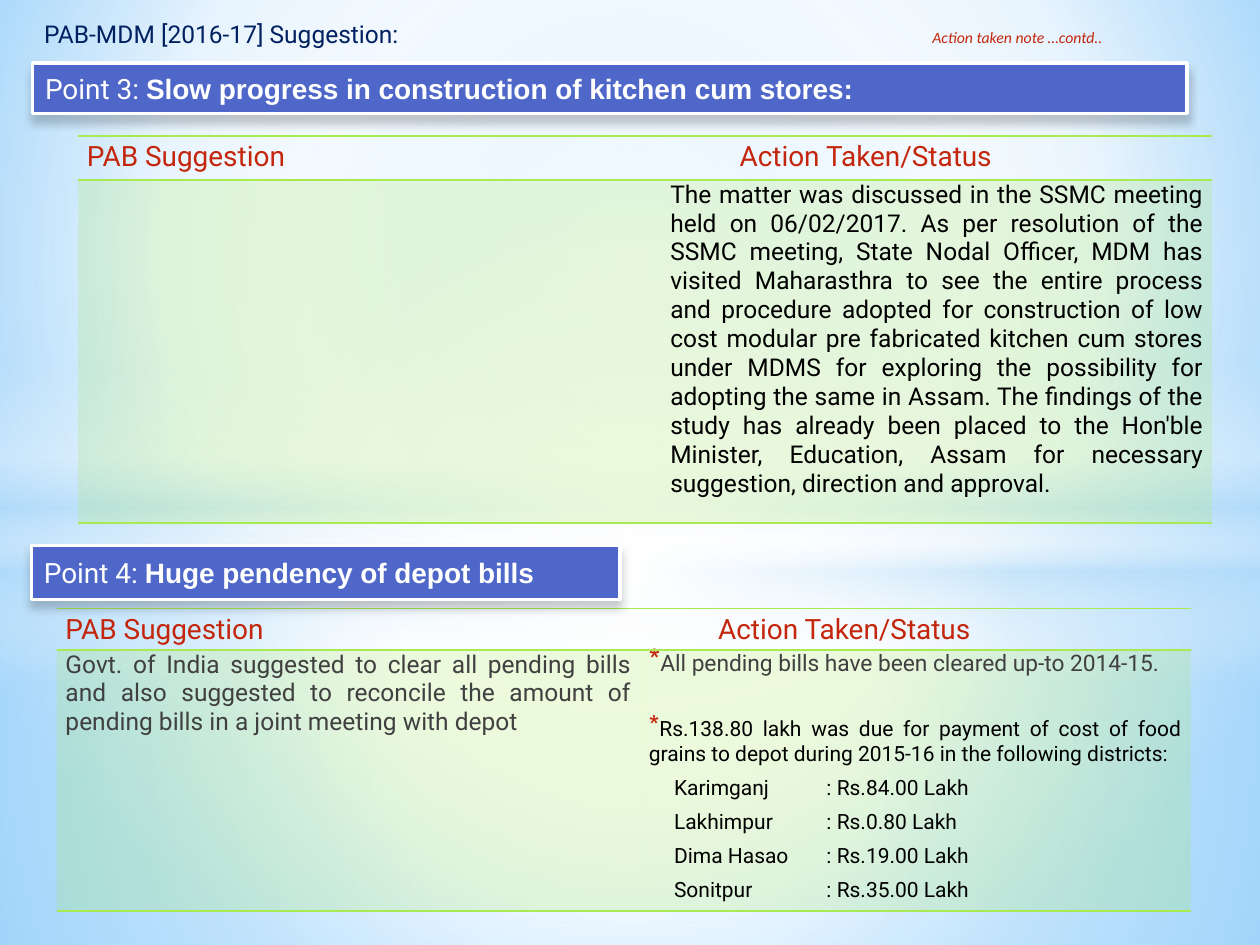
import pptx
import pptx.util
import pptx.oxml
import pptx.oxml.ns
import pptx.dml.color
import pptx.enum.shapes
import pptx.enum.text

Inches, Pt = pptx.util.Inches, pptx.util.Pt
Align, Anchor = pptx.enum.text.PP_ALIGN, pptx.enum.text.MSO_ANCHOR
Shape = pptx.enum.shapes.MSO_SHAPE
qn = pptx.oxml.ns.qn

COLORS = {
    "navy": "002060", "red": "C3260C", "banner": "4E67C8", "green": "A7EA52",
    "white": "FFFFFF", "black": "000000", "gray": "404040",
    "sky": "B4DCFA", "edge": "9ED5FF", "deep": "5BB9FF",
}
NO_GRID_STYLE = "{2D5ABB26-0587-4C30-8999-92F81FD0307C}"
COLUMNS = (4.63, 4.37)
CENTER = (50, 50, 50, 50)


def rgb(name):
    return pptx.dml.color.RGBColor.from_string(COLORS[name])


def inches(box):
    return [Inches(value) for value in box]


def xml(markup):
    head, tail = markup.split(">", 1) if not markup.split(">", 1)[0].endswith("/") else (markup[:-2], None)
    namespace = " " + pptx.oxml.ns.nsdecls("a")
    return pptx.oxml.parse_xml(head + namespace + ("/>" if tail is None else ">" + tail))


def color_xml(name, opacity=100):
    return f'<a:srgbClr val="{COLORS[name]}"><a:alpha val="{opacity * 1000}"/></a:srgbClr>'


def set_font(font, size, color, name="Roboto", bold=False, italic=False):
    font.size, font.name, font.bold, font.italic = Pt(size), name, bold, italic
    font.color.rgb = rgb(color)


def add_run(paragraph, text, *style, **options):
    run = paragraph.add_run()
    run.text = text
    set_font(run.font, *style, **options)


def set_tabs(paragraph, *positions):
    stops = "".join(f'<a:tab pos="{Inches(p)}" algn="l"/>' for p in positions)
    paragraph._p.get_or_add_pPr().append(xml(f"<a:tabLst>{stops}</a:tabLst>"))


def set_gradient(owner, fill, stops, center=None):
    """Stops are (position, color, opacity); without a center the run is vertical."""
    fill.gradient()
    gradient = next(owner.iter(qn("a:gradFill")))
    stop_list = "".join(f'<a:gs pos="{position * 1000}">{color_xml(color, opacity)}</a:gs>'
                        for position, color, opacity in stops)
    if center:
        sides = " ".join(f'{side}="{share * 1000}"' for side, share in zip("ltrb", center))
        direction = f'<a:path path="circle"><a:fillToRect {sides}/></a:path>'
    else:
        direction = '<a:lin ang="5400000" scaled="0"/>'
    gradient.getparent().replace(gradient, xml(
        f'<a:gradFill rotWithShape="1"><a:gsLst>{stop_list}</a:gsLst>{direction}</a:gradFill>'))


def add_backdrop(slide, width, height):
    set_gradient(slide.element, slide.background.fill,
                 [(0, "edge", 100), (60, "white", 100), (100, "deep", 100)], (20, 10, 20, 60))
    layers = [  # shape, top and height as shares, stops, center
        (Shape.RECTANGLE, 0.564, 0.436,
         [(0, "white", 91), (37, "white", 76), (100, "sky", 79)], CENTER),
        (Shape.RECTANGLE, 0, 0.564,
         [(0, "white", 89), (48, "white", 62), (100, "sky", 79)], CENTER),
        (Shape.RECTANGLE, 0.387, 0.333,
         [(0, "white", 0), (29, "white", 30), (45, "sky", 40),
          (55, "white", 26), (65, "sky", 60), (100, "white", 0)], None),
        (Shape.OVAL, 0.233, 0.744, [(0, "white", 100), (54, "white", 0)], CENTER),
    ]
    for kind, top, share, stops, center in layers:
        layer = slide.shapes.add_shape(kind, 0, int(top * height), width, int(share * height))
        layer.shadow.inherit = False
        layer.line.fill.background()
        set_gradient(layer.element, layer.fill, stops, center)


def add_title(slide, box):
    title = slide.shapes.title
    title.element.getparent().append(title.element)  # in front of the backdrop
    title.left, title.top, title.width, title.height = inches(box)
    frame = title.text_frame
    frame.vertical_anchor = Anchor.MIDDLE
    frame.auto_size = pptx.enum.text.MSO_AUTO_SIZE.NONE
    paragraph = frame.paragraphs[0]
    paragraph.alignment = Align.LEFT
    set_tabs(paragraph, 7.05)
    add_run(paragraph, "PAB-MDM [2016-17] Suggestion:", 14, "navy")
    add_run(paragraph, "\tAction taken note …contd..", 9, "red", name="Calibri", italic=True)


def add_banner(slide, box, label, heading):
    banner = slide.shapes.add_shape(Shape.RECTANGLE, *inches(box))
    banner.shadow.inherit = False
    banner.fill.solid()
    banner.fill.fore_color.rgb = rgb("banner")
    banner.line.color.rgb = rgb("white")
    banner.line.width = Pt(2)
    banner.element.spPr.find(qn("a:effectLst")).append(xml(
        f'<a:outerShdw blurRad="{Pt(5)}" dist="{Pt(4)}" dir="5400000" rotWithShape="0">'
        f'{color_xml("black", 20)}</a:outerShdw>'))
    frame = banner.text_frame
    frame.word_wrap = True
    frame.vertical_anchor = Anchor.MIDDLE
    paragraph = frame.paragraphs[0]
    paragraph.alignment = Align.LEFT
    add_run(paragraph, label + " ", 16, "white")
    add_run(paragraph, heading, 16, "white", name="Arial", bold=True)


def set_borders(cell, sides):
    properties = cell._tc.get_or_add_tcPr()
    for index, side in enumerate(sides):
        properties.insert(index, xml(f'<a:ln{side} w="{Pt(1)}"><a:solidFill>{color_xml("green")}'
                                     f'</a:solidFill></a:ln{side}>'))


def add_body_paragraph(cell, text, size, color, before=2.4, after=3, bullet=False, tabs=()):
    frame = cell.text_frame
    first = not frame.text
    paragraph = frame.paragraphs[0] if first else frame.add_paragraph()
    paragraph.text = text
    paragraph.alignment = Align.LEFT if tabs else Align.JUSTIFY
    paragraph.space_before, paragraph.space_after = Pt(0 if first else before), Pt(after)
    if bullet:
        properties = paragraph._p.get_or_add_pPr()
        properties.append(xml(f'<a:buClr>{color_xml("red")}</a:buClr>'))
        properties.append(xml('<a:buSzPct val="130000"/>'))
        properties.append(xml('<a:buChar char="*"/>'))
    if tabs:
        set_tabs(paragraph, *tabs)
    set_font(paragraph.font, size, color)


def add_status_table(slide, left, top, row_heights):
    """Adds the two-column table with its headings; returns the body cells."""
    frame = slide.shapes.add_table(2, 2, *inches((left, top, sum(COLUMNS), sum(row_heights))))
    table = frame.table
    table.first_row = table.horz_banding = False
    table._tbl.tblPr.find(qn("a:tableStyleId")).text = NO_GRID_STYLE
    for column, width in zip(table.columns, COLUMNS):
        column.width = Inches(width)
    for row, height in zip(table.rows, row_heights):
        row.height = Inches(height)
    for cell in table.iter_cells():
        cell.margin_left = cell.margin_right = Inches(0.07)
        cell.margin_top = cell.margin_bottom = 0
    headings = (("PAB Suggestion", 0.07), ("Action Taken/Status", 0.62))
    for column, (heading, margin) in enumerate(headings):
        header, body = table.cell(0, column), table.cell(1, column)
        header.fill.background()
        header.margin_left = Inches(margin)
        paragraph = header.text_frame.paragraphs[0]
        paragraph.text = heading
        paragraph.line_spacing, paragraph.space_after = 1.15, Pt(3)
        set_font(paragraph.font, 16, "red")
        body.fill.solid()
        body.fill.fore_color.rgb = rgb("green")
        next(body._tc.iter(qn("a:srgbClr"))).append(xml('<a:alpha val="20000"/>'))
        set_borders(header, "TB")
        set_borders(body, "TB")
    return table.cell(1, 0), table.cell(1, 1)


def add_kitchen_table(slide, left, top):
    status = add_status_table(slide, left, top, (0.35, 2.72))[1]
    add_body_paragraph(
        status,
        "The matter was discussed in the SSMC meeting held on 06/02/2017. As per resolution of the "
        "SSMC meeting, State Nodal Officer, MDM has visited Maharasthra to see the entire process "
        "and procedure adopted for construction of low cost modular pre fabricated kitchen cum "
        "stores under MDMS for exploring the possibility for adopting the same in Assam. The "
        "findings of the study has already been placed to the Hon'ble Minister, Education, Assam "
        "for necessary suggestion, direction and approval.", 14, "black")


def add_bills_table(slide, left, top):
    suggestion, status = add_status_table(slide, left, top, (0.33, 2.07))
    add_body_paragraph(
        suggestion,
        "Govt. of India suggested to clear all pending bills and also suggested to reconcile the "
        "amount of pending bills in a joint meeting with depot", 14, "gray", after=6)
    add_body_paragraph(status, "All pending bills have been cleared up-to 2014-15.",
                       13, "gray", bullet=True)
    add_body_paragraph(
        status,
        "Rs.138.80 lakh was due for payment of cost of food grains to depot during 2015-16 in the "
        "following districts:", 12, "black", before=20, bullet=True)
    dues = {"Karimganj": "84.00", "Lakhimpur": "0.80", "Dima Hasao": "19.00", "Sonitpur": "35.00"}
    for district, amount in dues.items():
        add_body_paragraph(status, f"\t{district}\t: Rs.{amount} Lakh", 12, "black",
                           tabs=(0.2, 1.41))


def main():
    presentation = pptx.Presentation()
    presentation.slide_width, presentation.slide_height = Inches(10), Inches(7.5)
    slide = presentation.slides.add_slide(presentation.slide_layouts[5])
    add_backdrop(slide, presentation.slide_width, presentation.slide_height)
    add_title(slide, (0.25, 0.08, 9.58, 0.37))
    add_bills_table(slide, 0.45, 4.83)
    add_banner(slide, (0.25, 4.33, 4.67, 0.43), "Point 4:", "Huge pendency of depot bills")
    add_banner(slide, (0.26, 0.5, 9.16, 0.4), "Point 3:",
               "Slow progress in construction of kitchen cum stores:")
    add_kitchen_table(slide, 0.62, 1.08)
    presentation.save("out.pptx")


if __name__ == "__main__":
    main()
